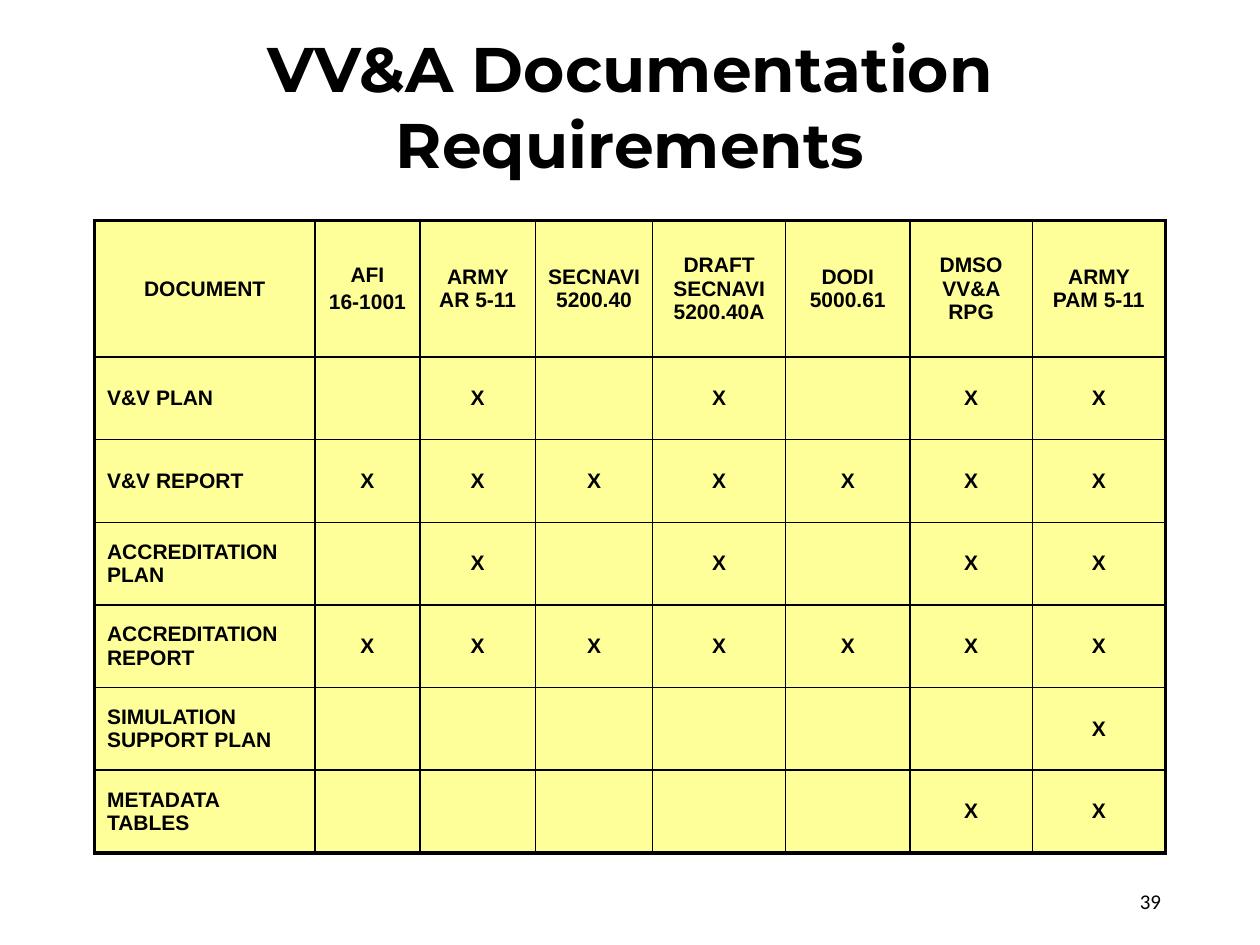
from lxml import etree
from pptx import Presentation
from pptx.dml.color import RGBColor
from pptx.enum.text import MSO_ANCHOR, PP_ALIGN
from pptx.oxml.ns import qn
from pptx.util import Pt

LEFT, CENTER, RIGHT = PP_ALIGN.LEFT, PP_ALIGN.CENTER, PP_ALIGN.RIGHT
MIDDLE = MSO_ANCHOR.MIDDLE
BLACK = RGBColor(0x00, 0x00, 0x00)
YELLOW = RGBColor(0xFF, 0xFF, 0x99)

THIN, THICK = 1, 2.25
WIDTHS = [126, 60, 66, 67, 76, 71, 70, 76]
HEAD, ROW = 78, 47.25
HEADS = ["DOCUMENT", "AFI\n16-1001", "ARMY AR 5-11", "SECNAVI 5200.40",
         "DRAFT SECNAVI 5200.40A", "DODI 5000.61", "DMSO VV&A RPG",
         "ARMY PAM 5-11"]
# One sign for each column after the first: X for required, - for blank
MARKS = {
    "V&V PLAN": "-X-X-XX",
    "V&V REPORT": "XXXXXXX",
    "ACCREDITATION PLAN": "-X-X-XX",
    "ACCREDITATION REPORT": "XXXXXXX",
    "SIMULATION SUPPORT PLAN": "------X",
    "METADATA TABLES": "-----XX",
}

TITLE = {"name": "Montserrat", "size": Pt(36), "bold": True}
CELL = {"name": "Arial", "size": Pt(12), "bold": True}
PAGE = {"name": "Calibri", "size": Pt(12), "bold": False}


def write(frame, text, style, align):
    frame.word_wrap = True
    frame.vertical_anchor = MIDDLE
    frame.text = text
    for i, para in enumerate(frame.paragraphs):
        para.alignment = align
        if i:
            para.space_before = Pt(2.4)
        for key, value in style.items():
            setattr(para.font, key, value)
        para.font.color.rgb = BLACK


def edge(cell, side, width):
    """Draw one side (L, R, T or B) of a cell; call before the fill is set."""
    props = cell._tc.get_or_add_tcPr()
    line = etree.SubElement(props, qn(f"a:ln{side}"), w=str(Pt(width)))
    fill = etree.SubElement(line, qn("a:solidFill"))
    etree.SubElement(fill, qn("a:srgbClr"), val=str(BLACK))


def add_title(slide, text):
    title = slide.shapes.title
    title.left, title.top = Pt(49.5), Pt(13)
    title.width, title.height = Pt(621), Pt(94.5)
    write(title.text_frame, text, TITLE, CENTER)


def add_grid(slide):
    rows = [HEADS]
    for name, signs in MARKS.items():
        rows.append([name] + [sign.replace("-", "") for sign in signs])
    tall = [HEAD] + [ROW] * len(MARKS)
    table = slide.shapes.add_table(len(rows), len(WIDTHS), Pt(54), Pt(126),
                                   Pt(sum(WIDTHS)), Pt(sum(tall))).table
    table.first_row = table.horz_banding = False
    for col, width in zip(table.columns, WIDTHS):
        col.width = Pt(width)
    for row, height in zip(table.rows, tall):
        row.height = Pt(height)

    end_row, end_col = len(rows) - 1, len(WIDTHS) - 1
    for r, row in enumerate(rows):
        for c, text in enumerate(row):
            cell = table.cell(r, c)
            outer = {"L": c == 0, "R": c == end_col,
                     "T": r == 0, "B": r == end_row}
            for side, is_outer in outer.items():
                edge(cell, side, THICK if is_outer else THIN)
            cell.fill.solid()
            cell.fill.fore_color.rgb = YELLOW
            cell.vertical_anchor = MIDDLE
            write(cell.text_frame, text, CELL, LEFT if r and not c else CENTER)


def add_page(slide, text):
    box = slide.shapes.add_textbox(Pt(508.5), Pt(500.5), Pt(162), Pt(28.75))
    write(box.text_frame, text, PAGE, RIGHT)


def main():
    deck = Presentation()
    deck.slide_width, deck.slide_height = Pt(720), Pt(540)
    slide = deck.slides.add_slide(deck.slide_layouts[5])
    add_title(slide, "VV&A Documentation Requirements")
    add_grid(slide)
    add_page(slide, "39")
    deck.save("out.pptx")


if __name__ == "__main__":
    main()
